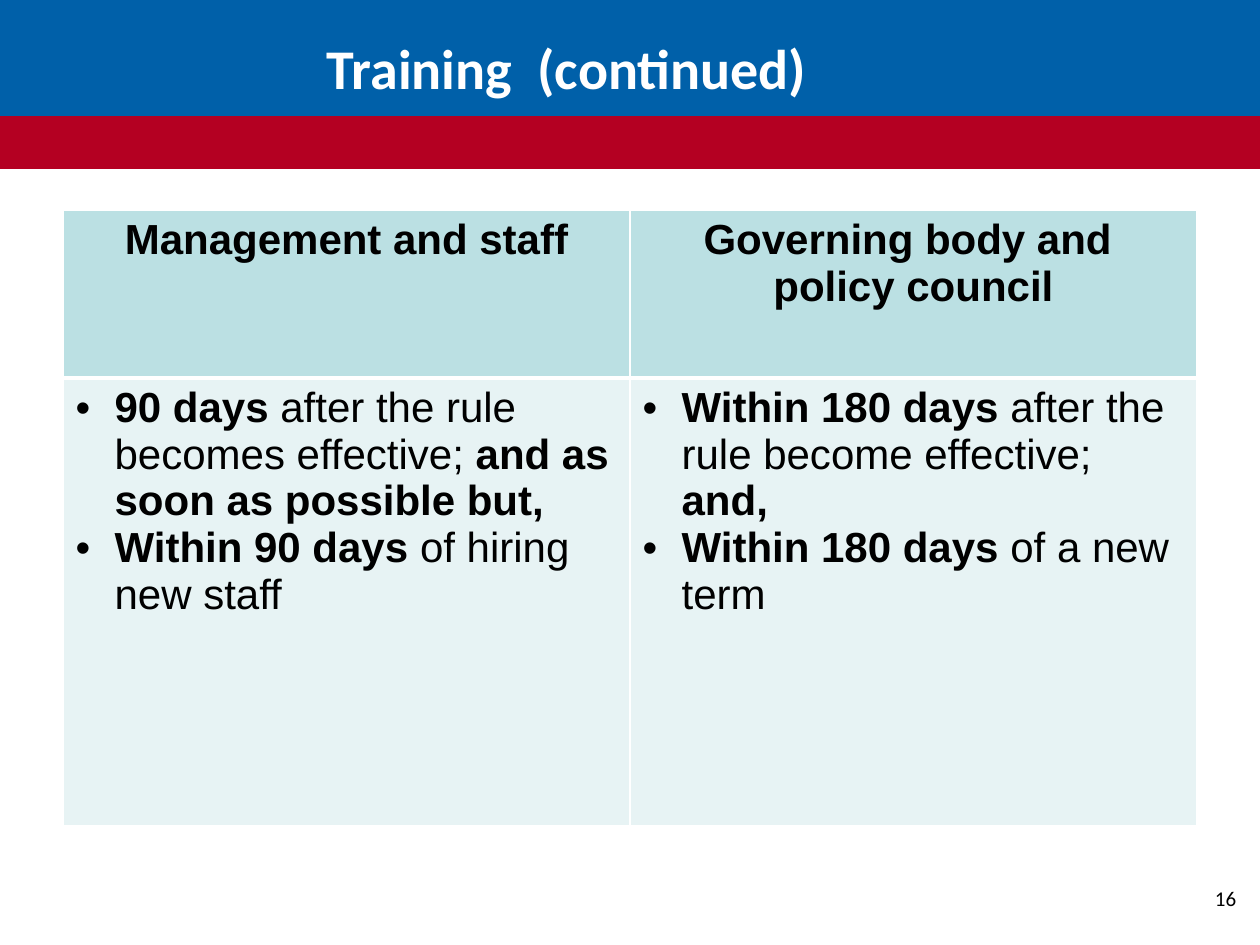
from lxml.etree import SubElement
from pptx import Presentation
from pptx.dml.color import RGBColor
from pptx.enum.shapes import MSO_SHAPE as Shape
from pptx.enum.text import MSO_ANCHOR as Anchor, PP_ALIGN as Align
from pptx.oxml.ns import qn
from pptx.util import Inches, Pt

BLUE = RGBColor(0x00, 0x60, 0xA9)
RED = RGBColor(0xB4, 0x00, 0x22)
WHITE = RGBColor(0xFF, 0xFF, 0xFF)
BLACK = RGBColor(0x00, 0x00, 0x00)
TEAL = RGBColor(0xBB, 0xE0, 0xE3)
PALE = RGBColor(0xE7, 0xF3, 0xF4)

HEADS = [
    ["Management and staff"],
    ["Governing body and ", "policy council"],
]
# Each point is a list of runs, bold and regular by turns.
POINTS = [
    [["90 days ", "after the rule becomes effective; ",
      "and as soon as possible but,"],
     ["Within 90 days ", "of hiring new staff"]],
    [["Within 180 days ", "after the rule become effective; ", "and,"],
     ["Within 180 days ", "of a new term"]],
]


def set_font(para, name, size, color, bold=None):
    font = para.font
    font.name, font.size, font.bold = name, Pt(size), bold
    font.color.rgb = color


def add_band(slide, top, height, color):
    band = slide.shapes.add_shape(
        Shape.RECTANGLE, 0, Inches(top), Inches(10), Inches(height))
    band.shadow.inherit = False
    band.fill.solid()
    band.fill.fore_color.rgb = color
    band.line.fill.background()


def add_label(slide, text, box, align, size, color, bold=None):
    frame = slide.shapes.add_textbox(*map(Inches, box)).text_frame
    frame.word_wrap = True
    para = frame.paragraphs[0]
    para.text, para.alignment = text, align
    set_font(para, "Calibri", size, color, bold)
    return frame


def add_paras(frame, count):
    """Return count paragraphs, the first being the one already there."""
    return [frame.paragraphs[0]] + [
        frame.add_paragraph() for _ in range(count - 1)]


def add_bullet(para):
    props = para._p.get_or_add_pPr()
    props.set("marL", str(Inches(0.31)))
    props.set("indent", str(-Inches(0.31)))
    SubElement(props, qn("a:buFont"), typeface="Arial")
    SubElement(props, qn("a:buChar"), char="•")


def set_edges(cell, base):
    """Draw white cell borders; base is the width of the bottom one."""
    props = cell._tc.get_or_add_tcPr()
    for side, width in zip("LRTB", (1, 1, 1, base)):
        line = SubElement(props, qn(f"a:ln{side}"), w=str(Pt(width)))
        fill = SubElement(line, qn("a:solidFill"))
        SubElement(fill, qn("a:srgbClr"), val=str(WHITE))


def style_cell(cell, color, base):
    set_edges(cell, base)
    cell.fill.solid()
    cell.fill.fore_color.rgb = color


def fill_head(cell, lines):
    style_cell(cell, TEAL, 3)
    for para, line in zip(add_paras(cell.text_frame, len(lines)), lines):
        para.text, para.alignment = line, Align.CENTER
        set_font(para, "Arial", 24, BLACK, True)


def fill_body(cell, points):
    style_cell(cell, PALE, 1)
    for para, runs in zip(add_paras(cell.text_frame, len(points)), points):
        add_bullet(para)
        set_font(para, "Arial", 24, BLACK)
        for i, text in enumerate(runs):
            run = para.add_run()
            run.text, run.font.bold = text, i % 2 == 0


def add_grid(slide):
    grid = slide.shapes.add_table(
        2, 2, Inches(0.5), Inches(1.67), Inches(9), Inches(4.88)).table
    for row, height in zip(grid.rows, (1.33, 3.55)):
        row.height = Inches(height)
    for col, (head, points) in enumerate(zip(HEADS, POINTS)):
        fill_head(grid.cell(0, col), head)
        fill_body(grid.cell(1, col), points)
    # The rule under the heads is shared by both rows.
    for cell in grid.rows[1].cells:
        cell._tc.tcPr.find(qn("a:lnT")).set("w", str(Pt(3)))


def main():
    deck = Presentation()
    deck.slide_width, deck.slide_height = Inches(10), Inches(7.5)
    slide = deck.slides.add_slide(deck.slide_layouts[6])
    add_band(slide, 0.92, 0.42, RED)
    add_band(slide, 0, 0.92, BLUE)
    title = add_label(slide, "Training  (continued)", (0, 0.22, 9, 0.62),
                      Align.CENTER, 32, WHITE, True)
    title.vertical_anchor = Anchor.MIDDLE
    add_label(slide, "16", (7.58, 6.98, 2.33, 0.52), Align.RIGHT, 12, BLACK)
    add_grid(slide)
    deck.save("out.pptx")


if __name__ == "__main__":
    main()
